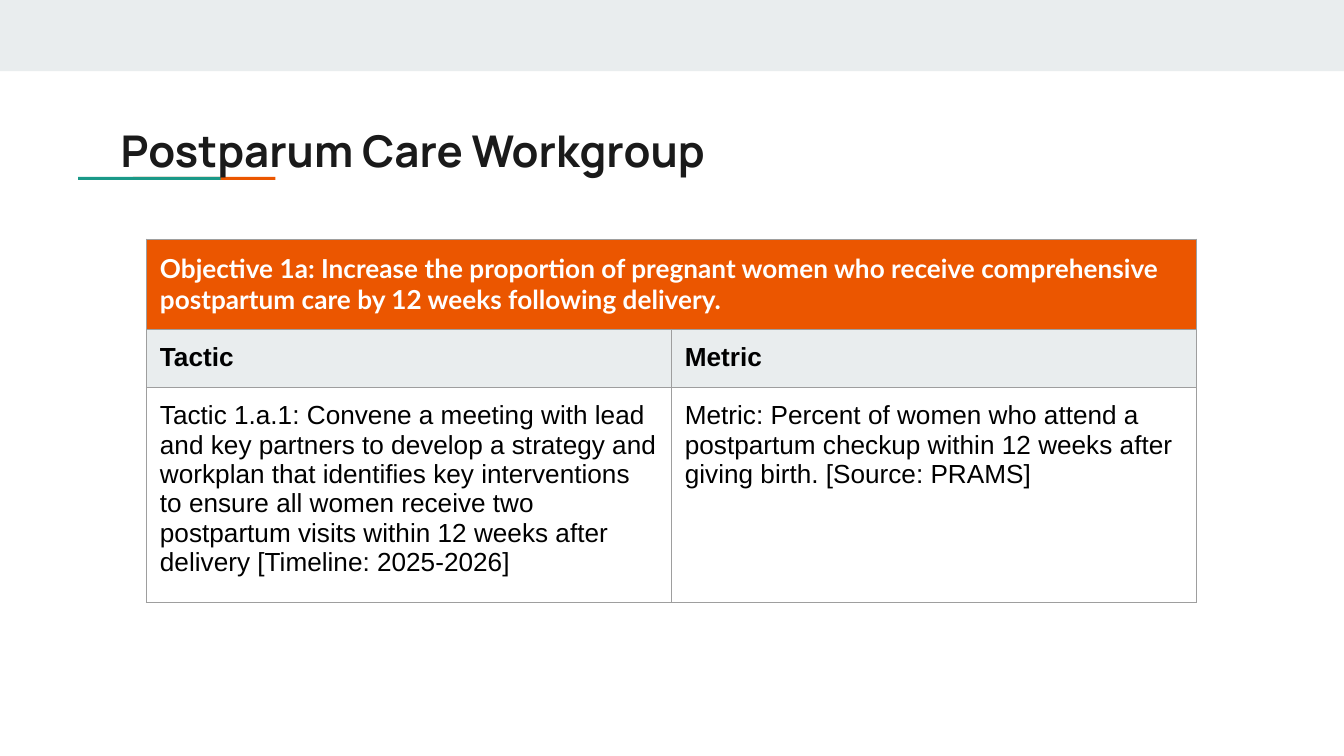
from lxml.etree import SubElement
from pptx import Presentation
from pptx.dml.color import RGBColor
from pptx.enum.shapes import MSO_SHAPE
from pptx.oxml.ns import qn
from pptx.util import Pt

PALE = RGBColor(0xE9, 0xED, 0xEE)
ORANGE = RGBColor(0xEB, 0x56, 0x00)
TEAL = RGBColor(0x1A, 0x99, 0x88)
INK = RGBColor(0x1A, 0x1A, 0x1A)
BLACK = RGBColor(0, 0, 0)
WHITE = RGBColor(0xFF, 0xFF, 0xFF)
GREY = RGBColor(0x9E, 0x9E, 0x9E)

OBJECTIVE = (
    "Objective 1a: Increase the proportion of pregnant women who receive "
    "comprehensive postpartum care by 12 weeks following delivery."
)
TACTIC = (
    "Tactic 1.a.1: Convene a meeting with lead and key partners to develop a "
    "strategy and workplan that identifies key interventions to ensure all women "
    "receive two postpartum visits within 12 weeks after delivery "
    "[Timeline: 2025-2026]"
)
METRIC = (
    "Metric: Percent of women who attend a\n"
    "postpartum checkup within 12 weeks after\n"
    "giving birth. [Source: PRAMS]"
)


def write_text(frame, text, *, size=14, font="Arial", color=BLACK, bold=False):
    """Write each line of text as a paragraph in the given format."""
    frame.word_wrap = True
    for index, line in enumerate(text.split("\n")):
        para = frame.add_paragraph() if index else frame.paragraphs[0]
        span = para.add_run()
        span.text = line
        span.font.size = Pt(size)
        span.font.name = font
        span.font.color.rgb = color
        span.font.bold = bold


def set_margins(holder, margin):
    """Give a text frame or cell the same margin on every side."""
    for side in ("left", "top", "right", "bottom"):
        setattr(holder, f"margin_{side}", Pt(margin))


def add_bar(slide, left, top, width, height, color):
    """Draw a plain filled rectangle."""
    bar = slide.shapes.add_shape(
        MSO_SHAPE.RECTANGLE, Pt(left), Pt(top), Pt(width), Pt(height)
    )
    bar.shadow.inherit = False
    bar.fill.solid()
    bar.fill.fore_color.rgb = color
    bar.line.fill.background()


def add_heading(slide, left, top, width, height):
    """Place the title over its two-colour underline."""
    for offset, color in ((13.6, ORANGE), (-15.8, TEAL)):
        add_bar(slide, left + offset, top + 35.8, 76.4, 1.6, color)
    box = slide.shapes.add_textbox(Pt(left), Pt(top), Pt(width), Pt(height))
    set_margins(box.text_frame, 7.2)
    write_text(box.text_frame, "Postparum Care Workgroup",
               size=23.4, font="Manrope", color=INK, bold=True)


def add_borders(cell):
    """Rule all four sides of a cell in grey."""
    properties = cell._tc.get_or_add_tcPr()
    for side in ("lnL", "lnR", "lnT", "lnB"):
        rule = SubElement(properties, qn(f"a:{side}"), w=str(Pt(0.75)))
        fill = SubElement(rule, qn("a:solidFill"))
        SubElement(fill, qn("a:srgbClr"), val=str(GREY))


def add_objective_table(slide, left, top, width, row_heights):
    """Place the objective banner above its tactic and metric columns."""
    table = slide.shapes.add_table(
        len(row_heights), 2, Pt(left), Pt(top), Pt(width), Pt(sum(row_heights))
    ).table
    table.first_row = table.horz_banding = False
    for column in table.columns:
        column.width = Pt(width / 2)
    for row, height in zip(table.rows, row_heights):
        row.height = Pt(height)
    table.cell(0, 0).merge(table.cell(0, 1))

    banner = {"font": "Lato", "color": WHITE, "bold": True}
    rows = (
        ((OBJECTIVE, ""), ORANGE, banner),
        (("Tactic", "Metric"), PALE, {"bold": True}),
        ((TACTIC, METRIC), None, {}),
    )
    for row, (texts, color, style) in zip(table.rows, rows):
        for cell, text in zip(row.cells, texts):
            set_margins(cell, 7.2)
            add_borders(cell)
            if color is None:
                cell.fill.background()
            else:
                cell.fill.solid()
                cell.fill.fore_color.rgb = color
            if text:
                write_text(cell.text_frame, text, **style)


def main():
    """Build and save the workgroup slide."""
    deck = Presentation()
    deck.slide_width, deck.slide_height = Pt(720), Pt(405)
    slide = deck.slides.add_slide(deck.slide_layouts[6])
    add_bar(slide, 0, 0, 720, 38.2, PALE)
    add_heading(slide, 57.6, 59, 605.5, 42.5)
    add_objective_table(slide, 78.5, 128.2, 562.4, (48.2, 30, 108.8))
    deck.save("out.pptx")


if __name__ == "__main__":
    main()
